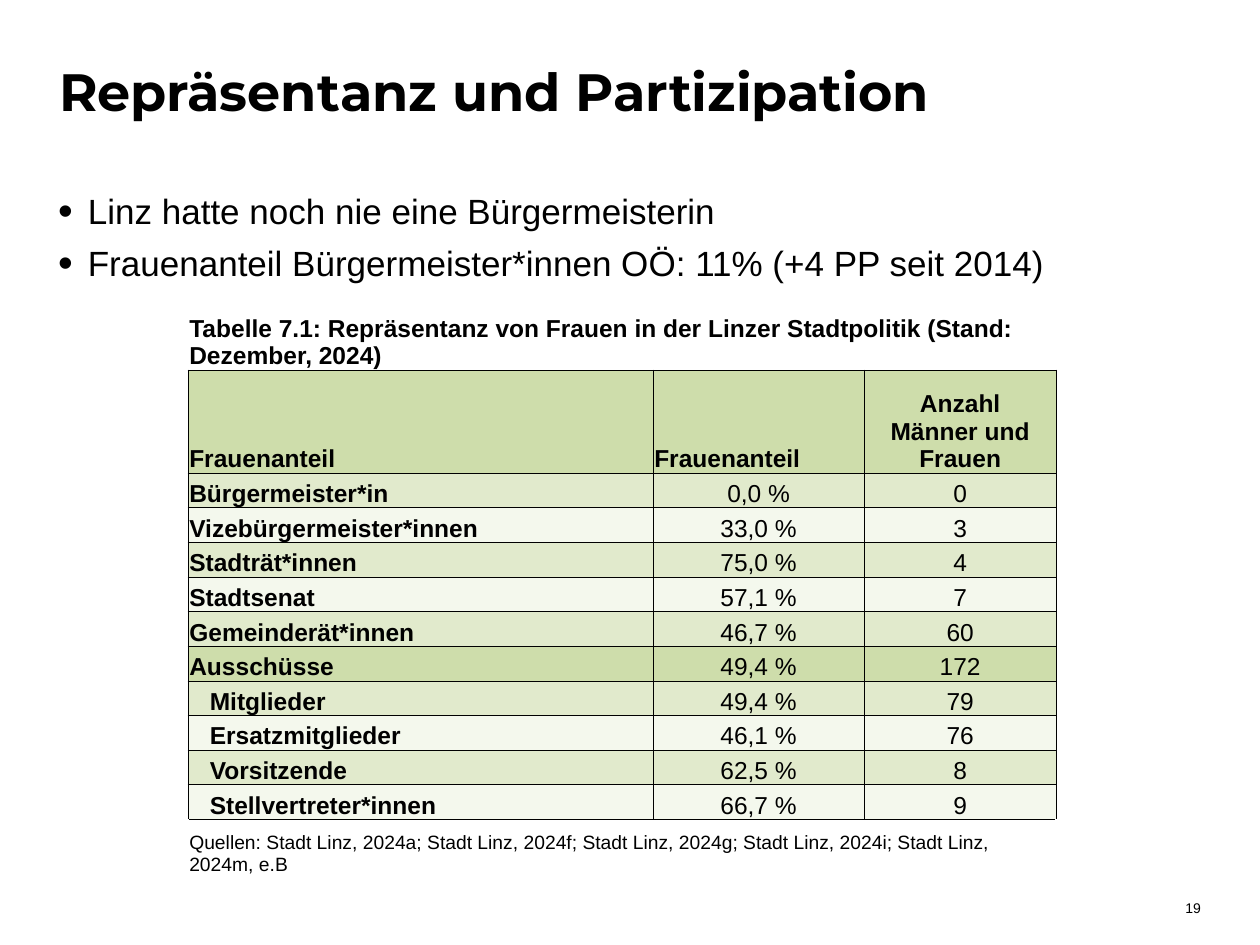
"""Build the slide on women's representation in Linz city politics."""
from lxml import etree
from pptx import Presentation
from pptx import util as u
from pptx.dml.color import RGBColor
from pptx.enum import text
from pptx.oxml.ns import qn

Pt = u.Pt
COLORS = {"text": "000000", "line": "000000", "blank": "FFFFFF",
          "head": "CEDDAB", "odd": "E1EACC", "even": "F4F8ED"}
LEFT, CENTER, RIGHT = text.PP_ALIGN.LEFT, text.PP_ALIGN.CENTER, text.PP_ALIGN.RIGHT


def add_run(p, words, size, bold=False, font="Arial"):
    r = p.add_run()
    r.text = words
    r.font.size, r.font.bold, r.font.name = Pt(size), bold, font
    r.font.color.rgb = RGBColor.from_string(COLORS["text"])


def style_cell(cell, fill, sides):
    cell.margin_left = cell.margin_right = cell.margin_top = Pt(0.7)
    cell.margin_bottom = Pt(0)
    cell.vertical_anchor = text.MSO_ANCHOR.BOTTOM
    tc_pr = cell._tc.get_or_add_tcPr()
    for side in sides:
        ln = etree.SubElement(tc_pr, qn("a:ln" + side), w=str(Pt(0.5)))
        solid = etree.SubElement(ln, qn("a:solidFill"))
        etree.SubElement(solid, qn("a:srgbClr"), val=COLORS["line"])
    cell.fill.solid()
    cell.fill.fore_color.rgb = RGBColor.from_string(COLORS[fill])


prs = Presentation()
prs.slide_width, prs.slide_height = Pt(720), Pt(540)
s = prs.slides.add_slide(prs.slide_layouts[1])

title = s.shapes.title
title.left, title.top, title.width, title.height = Pt(26.6), Pt(36), Pt(659), Pt(74)
tf = title.text_frame
tf.auto_size = text.MSO_AUTO_SIZE.NONE
tf.vertical_anchor = text.MSO_ANCHOR.TOP
p = tf.paragraphs[0]
p.alignment, p.line_spacing, p.space_after = LEFT, 0.83, Pt(4.5)
add_run(p, "Repräsentanz und Partizipation", 30, True, "Montserrat")

body = s.placeholders[1]
body.left, body.top, body.width, body.height = Pt(26), Pt(103.7), Pt(659), Pt(366.5)
tf = body.text_frame
tf.auto_size = text.MSO_AUTO_SIZE.NONE
bullets = ["Linz hatte noch nie eine Bürgermeisterin",
           "Frauenanteil Bürgermeister*innen OÖ: 11% (+4 PP seit 2014)"]
for i, words in enumerate(bullets):
    p = tf.add_paragraph() if i else tf.paragraphs[0]
    p_pr = p._p.get_or_add_pPr()
    p_pr.set("marL", str(Pt(17)))
    p_pr.set("indent", str(-Pt(17)))
    etree.SubElement(p_pr, qn("a:buSzPct"), val="120000")
    etree.SubElement(p_pr, qn("a:buChar"), char="•")
    p.line_spacing, p.space_before, p.space_after = 1.05, Pt(0), Pt(4.5)
    add_run(p, words, 20)

number = s.shapes.add_textbox(Pt(661.7), Pt(504.7), Pt(31.7), Pt(28.8))
tf = number.text_frame
tf.word_wrap = True
tf.vertical_anchor = text.MSO_ANCHOR.MIDDLE
p = tf.paragraphs[0]
p.alignment = RIGHT
add_run(p, "19", 8)

caption = "Tabelle 7.1: Repräsentanz von Frauen in der Linzer Stadtpolitik (Stand: Dezember, 2024)"
sources = ("Quellen: Stadt Linz, 2024a; Stadt Linz, 2024f; Stadt Linz, 2024g; "
           "Stadt Linz, 2024i; Stadt Linz, 2024m, e.B")
rows = [
    ("Frauenanteil", "Frauenanteil", "Anzahl\nMänner und Frauen", "head", 0),
    ("Bürgermeister*in", "0,0 %", "0", "odd", 0),
    ("Vizebürgermeister*innen", "33,0 %", "3", "even", 0),
    ("Stadträt*innen", "75,0 %", "4", "odd", 0),
    ("Stadtsenat", "57,1 %", "7", "even", 0),
    ("Gemeinderät*innen", "46,7 %", "60", "odd", 0),
    ("Ausschüsse", "49,4 %", "172", "head", 0),
    ("Mitglieder", "49,4 %", "79", "odd", 11.7),
    ("Ersatzmitglieder", "46,1 %", "76", "even", 11.7),
    ("Vorsitzende", "62,5 %", "8", "odd", 11.7),
    ("Stellvertreter*innen", "66,7 %", "9", "even", 11.7),
]
last = len(rows) + 1
heights = [40, 59] + [19.8] * (len(rows) - 1) + [32]
table = s.shapes.add_table(last + 1, 3, Pt(107.5), Pt(171.4), Pt(496), Pt(sum(heights))).table
table.first_row = table.horz_banding = False
for col, width in zip(table.columns, [265.7, 120.7, 109.6]):
    col.width = Pt(width)
for row, height in zip(table.rows, heights):
    row.height = Pt(height)

for y, words, size, bold, side in [(0, caption, 14, True, "B"), (last, sources, 11, False, "T")]:
    for x in range(3):
        style_cell(table.cell(y, x), "blank", side)
    table.cell(y, 0).merge(table.cell(y, 2))
    add_run(table.cell(y, 0).text_frame.paragraphs[0], words, size, bold)

for y, (*values, fill, indent) in enumerate(rows, 1):
    for x, words in enumerate(values):
        cell = table.cell(y, x)
        style_cell(cell, fill, "LRTB")
        p = cell.text_frame.paragraphs[0]
        p.alignment = LEFT if x == 0 or (y == 1 and x == 1) else CENTER
        if x == 0 and indent:
            p._p.get_or_add_pPr().set("marL", str(Pt(indent)))
        for i, line in enumerate(words.split("\n")):
            if i:
                p.add_line_break()
            add_run(p, line, 14, x == 0 or y == 1)

prs.save("out.pptx")
